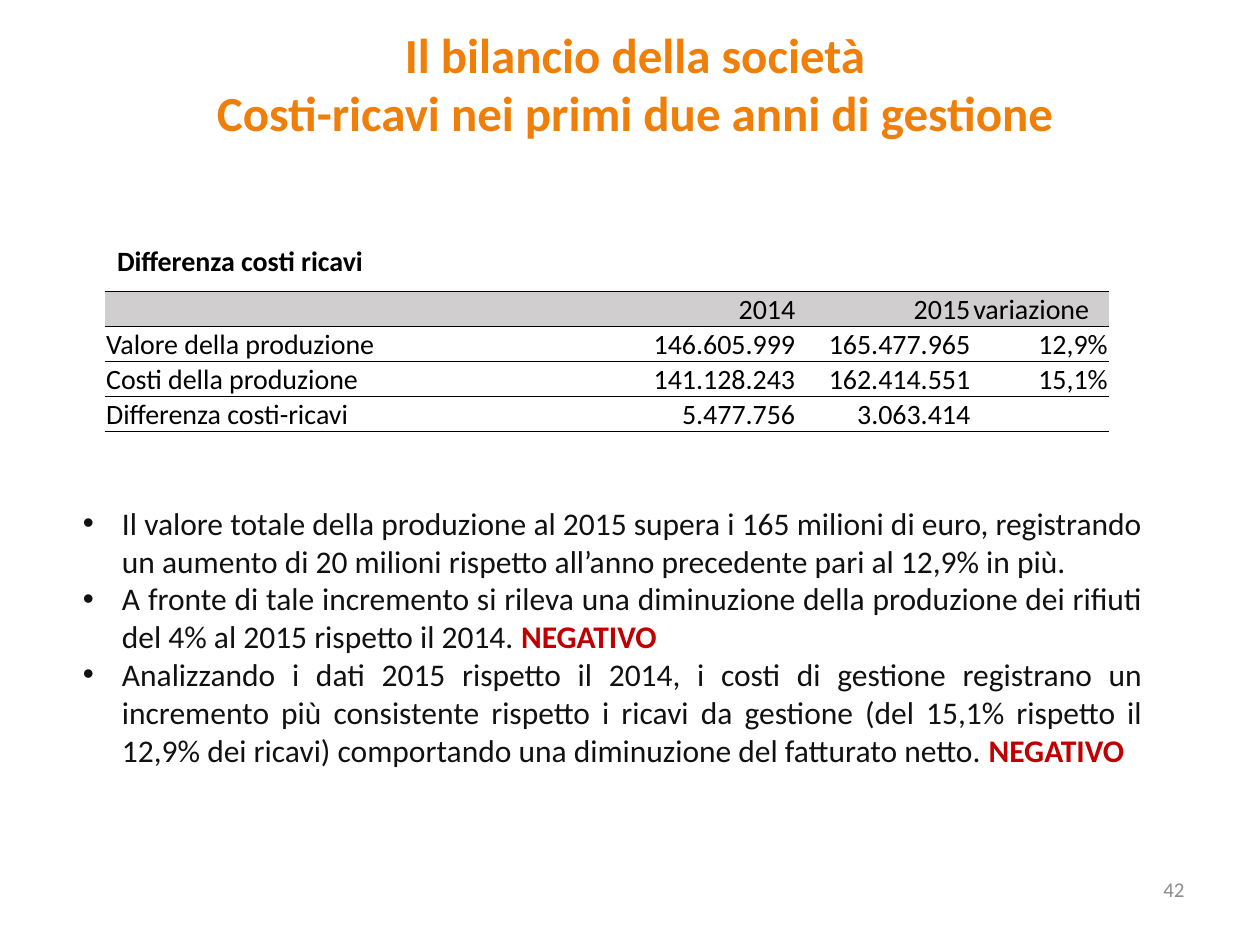
from lxml.etree import SubElement
from pptx import Presentation
from pptx.dml.color import RGBColor
from pptx.enum.text import MSO_ANCHOR, PP_ALIGN
from pptx.oxml.ns import qn
from pptx.util import Cm, Pt

COLORS = {
    "title": "F07F09",
    "body": "111111",
    "negative": "C00000",
    "table": "000000",
    "header": "D0CECE",
    "number": "8C8C8C",
}
FONT = "Calibri"
TABLE_SIZE = 16

TITLE = ["Il bilancio della società", "Costi-ricavi nei primi due anni di gestione"]
COLUMN_WIDTHS = [10.52, 3.43, 3.53, 2.77]
ROW_HEIGHT = 0.7
BALANCE = [
    ["", "2014", "2015", "variazione"],
    ["Valore della produzione", "146.605.999", "165.477.965", "12,9%"],
    ["Costi della produzione", "141.128.243", "162.414.551", "15,1%"],
    ["Differenza costi-ricavi", "5.477.756", "3.063.414", ""],
]
# Each comment: text, then an optional verdict
COMMENTS = [
    ("Il valore totale della produzione al 2015 supera i 165 milioni di euro, "
     "registrando un aumento di 20 milioni rispetto all’anno precedente pari al "
     "12,9% in più.", ""),
    ("A fronte di tale incremento si rileva una diminuzione della produzione dei "
     "rifiuti del 4% al 2015 rispetto il 2014. ", "NEGATIVO"),
    ("Analizzando i dati 2015 rispetto il 2014, i costi di gestione registrano un "
     "incremento più consistente rispetto i ricavi da gestione (del 15,1% rispetto "
     "il 12,9% dei ricavi) comportando una diminuzione del fatturato netto. ",
     "NEGATIVO"),
]


def add_run(paragraph, text, size, color, bold=False):
    run = paragraph.add_run()
    run.text = text
    run.font.name = FONT
    run.font.size = Pt(size)
    run.font.bold = bold
    run.font.color.rgb = RGBColor.from_string(COLORS[color])


def add_frame(slide, box, wrap=True):
    frame = slide.shapes.add_textbox(*map(Cm, box)).text_frame
    frame.word_wrap = wrap
    return frame


def add_paragraphs(frame, count):
    return [frame.paragraphs[0]] + [frame.add_paragraph() for _ in range(count - 1)]


def add_title(slide, box):
    frame = add_frame(slide, box)
    for paragraph, line in zip(add_paragraphs(frame, len(TITLE)), TITLE):
        paragraph.alignment = PP_ALIGN.CENTER
        add_run(paragraph, line, 28, "title", bold=True)


def add_caption(slide, box):
    paragraph = add_frame(slide, box, wrap=False).paragraphs[0]
    add_run(paragraph, "Differenza costi ricavi", 16, "table", bold=True)


def set_rules(cell):
    """Thin lines above and below the cell, none at its sides."""
    properties = cell._tc.get_or_add_tcPr()
    for side in ("L", "R", "T", "B"):
        line = SubElement(properties, qn(f"a:ln{side}"), w=str(Pt(0.5)))
        if side in "LR":
            SubElement(line, qn("a:noFill"))
        else:
            fill = SubElement(line, qn("a:solidFill"))
            SubElement(fill, qn("a:srgbClr"), val=COLORS["table"])


def fill_cell(cell, text, is_header, is_number):
    cell.margin_left = cell.margin_right = cell.margin_top = Cm(0.03)
    cell.margin_bottom = 0
    cell.vertical_anchor = MSO_ANCHOR.BOTTOM
    set_rules(cell)
    if is_header:
        cell.fill.solid()
        cell.fill.fore_color.rgb = RGBColor.from_string(COLORS["header"])
    else:
        cell.fill.background()
    paragraph = cell.text_frame.paragraphs[0]
    paragraph.alignment = PP_ALIGN.RIGHT if is_number else PP_ALIGN.LEFT
    if text:
        add_run(paragraph, text, TABLE_SIZE, "table")
    else:  # keeps an empty cell from growing its row
        SubElement(paragraph._p, qn("a:endParaRPr"), sz=str(TABLE_SIZE * 100))


def add_balance_table(slide, left, top):
    table = slide.shapes.add_table(
        len(BALANCE), len(COLUMN_WIDTHS), Cm(left), Cm(top),
        Cm(sum(COLUMN_WIDTHS)), Cm(ROW_HEIGHT * len(BALANCE))).table
    table.first_row = table.horz_banding = False
    for column, width in zip(table.columns, COLUMN_WIDTHS):
        column.width = Cm(width)
    for r, values in enumerate(BALANCE):
        table.rows[r].height = Cm(ROW_HEIGHT)
        for c, text in enumerate(values):
            is_number = c > 0 and text != "variazione"
            fill_cell(table.cell(r, c), text, r == 0, is_number)


def add_comments(slide, box):
    frame = add_frame(slide, box)
    paragraphs = add_paragraphs(frame, len(COMMENTS))
    for paragraph, (comment, verdict) in zip(paragraphs, COMMENTS):
        paragraph.alignment = PP_ALIGN.JUSTIFY
        properties = paragraph._p.get_or_add_pPr()
        indent = Cm(0.79)
        properties.set("marL", str(indent))
        properties.set("indent", str(-indent))
        SubElement(properties, qn("a:buFont"), typeface="Arial")
        SubElement(properties, qn("a:buChar"), char="•")
        add_run(paragraph, comment, 18, "body")
        if verdict:
            add_run(paragraph, verdict, 18, "negative", bold=True)


def add_page_number(slide, box):
    frame = add_frame(slide, box)
    frame.vertical_anchor = MSO_ANCHOR.MIDDLE
    paragraph = frame.paragraphs[0]
    paragraph.alignment = PP_ALIGN.RIGHT
    add_run(paragraph, "42", 12, "number")


def main():
    presentation = Presentation()
    presentation.slide_width = Cm(25.4)
    presentation.slide_height = Cm(19.05)
    slide = presentation.slides.add_slide(presentation.slide_layouts[6])
    add_title(slide, (0.2, 0.36, 25.2, 2.64))
    add_comments(slide, (1.42, 10.03, 21.87, 8.71))
    add_caption(slide, (2.11, 4.78, 5.56, 0.94))
    add_balance_table(slide, 2.11, 5.87)
    add_page_number(slide, (18.21, 17.53, 5.92, 0.79))
    presentation.save("out.pptx")


if __name__ == "__main__":
    main()
